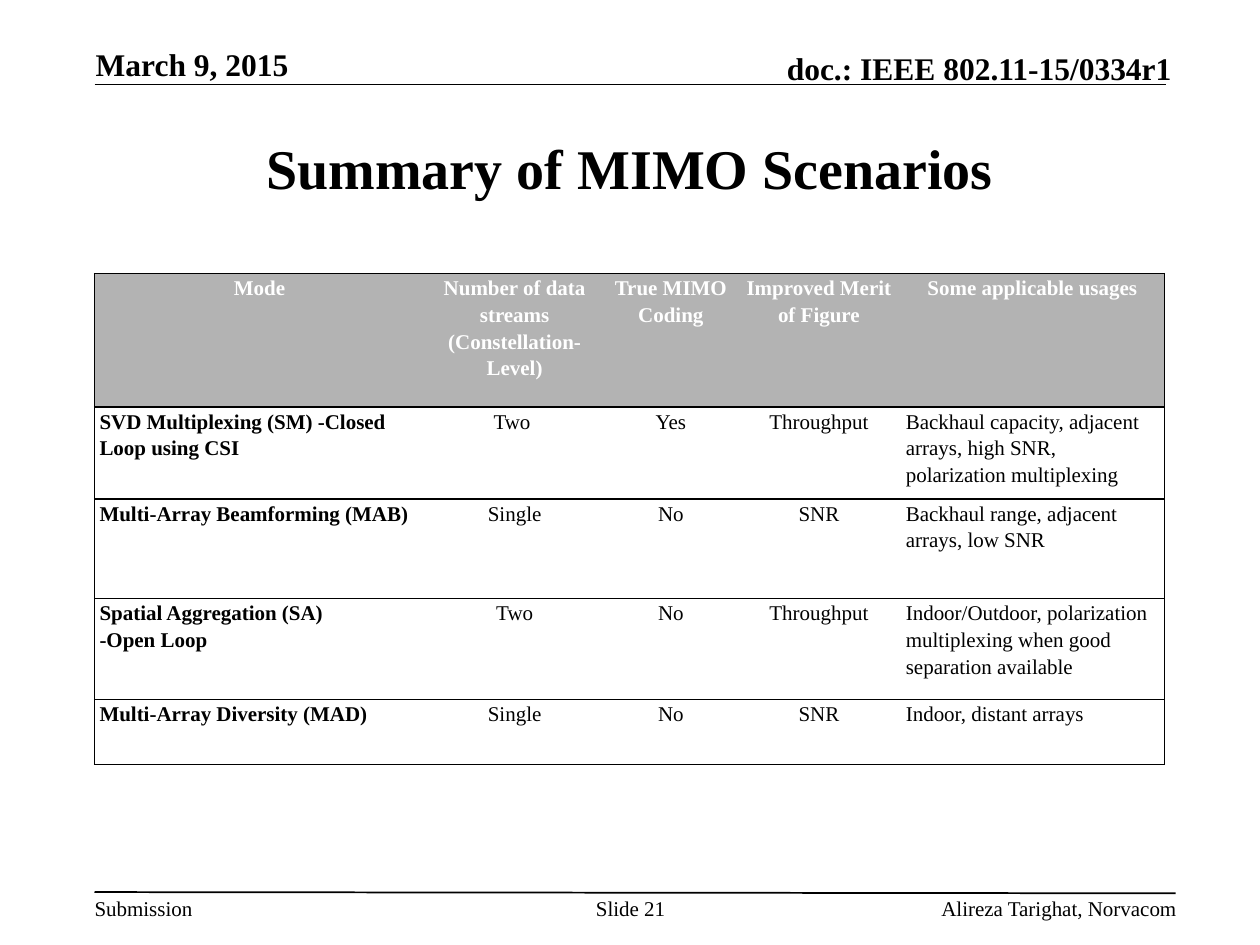
"""Build the summary slide of MIMO scenarios."""
from typing import NamedTuple

from lxml import etree
from pptx import Presentation
from pptx.dml.color import RGBColor
from pptx.enum import shapes, text
from pptx.oxml import ns
from pptx.util import Inches, Pt

COLORS = {"ink": "000000", "header_text": "FFFFFF", "header_fill": "B3B3B3"}
FONT = "Times New Roman"
LEFT, CENTER, RIGHT = text.PP_ALIGN.LEFT, text.PP_ALIGN.CENTER, text.PP_ALIGN.RIGHT
TOP, MIDDLE, BOTTOM = text.MSO_ANCHOR.TOP, text.MSO_ANCHOR.MIDDLE, text.MSO_ANCHOR.BOTTOM
BORDER = Pt(0.75)


class Label(NamedTuple):
    words: str
    box: tuple[float, float, float, float]
    size: float = 12
    bold: bool = False
    align: text.PP_ALIGN = LEFT
    anchor: text.MSO_ANCHOR = TOP
    margins: tuple[float, float, float, float] = (0, 0.03, 0, 0)
    wrap: bool = True


class Rule(NamedTuple):
    start: tuple[float, float]
    end: tuple[float, float]


LABELS = [
    Label("Submission", (0.75, 7.08, 0.79, 0.25), wrap=False),
    Label("doc.: IEEE 802.11-15/0334r1", (5.47, 0.39, 3.83, 0.3), 18, True, RIGHT, BOTTOM,
          (0, 0, 0, 0)),
    Label("Summary of MIMO Scenarios", (0.75, 0.75, 8.5, 1.16), 32, True, CENTER, MIDDLE,
          (0.1, 0.05, 0.1, 0.05)),
    Label("Slide 21", (4.61, 7.08, 0.79, 0.29), align=CENTER),
    Label("Alireza Tarighat, Norvacom", (5.86, 7.08, 3.48, 0.2), align=RIGHT),
    Label("March 9, 2015", (0.76, 0.36, 2.05, 0.3), 18, True, LEFT, BOTTOM, (0, 0, 0, 0)),
]
RULES = [Rule((0.75, 0.67), (9.25, 0.67)), Rule((0.75, 7.08), (9.33, 7.09))]

COLUMN_WIDTHS = [2.62, 1.43, 1.05, 1.3, 2.09]
ROW_HEIGHTS = [1.06, 0.73, 0.79, 0.8, 0.52]
SCENARIOS = [
    ("Mode", "Number of data streams (Constellation-Level)", "True MIMO Coding",
     "Improved Merit of Figure", "Some applicable usages"),
    ("SVD Multiplexing (SM) -Closed Loop using CSI", "Two ", "Yes", "Throughput",
     "Backhaul capacity, adjacent arrays, high SNR, polarization multiplexing"),
    ("Multi-Array Beamforming (MAB)", "Single", "No", "SNR",
     "Backhaul range, adjacent arrays, low SNR"),
    ("Spatial Aggregation (SA)\n-Open Loop", "Two", "No", "Throughput",
     "Indoor/Outdoor, polarization multiplexing when good separation available"),
    ("Multi-Array Diversity (MAD)", "Single", "No", "SNR", "Indoor, distant arrays"),
]


def write_text(frame, words: str, *, size: float = 12, bold: bool = False,
               color: str = "ink", align=LEFT, spacing: float = 1.0) -> None:
    """Fill a text frame, one paragraph per line of words."""
    for index, line in enumerate(words.split("\n")):
        paragraph = frame.add_paragraph() if index else frame.paragraphs[0]
        paragraph.alignment = align
        paragraph.line_spacing = spacing
        run = paragraph.add_run()
        run.text = line
        run.font.name = FONT
        run.font.size = Pt(size)
        run.font.bold = bold
        run.font.color.rgb = RGBColor.from_string(COLORS[color])


def add_label(slide, label: Label) -> None:
    """Place a label in its own text box."""
    frame = slide.shapes.add_textbox(*map(Inches, label.box)).text_frame
    frame.word_wrap = label.wrap
    frame.vertical_anchor = label.anchor
    (frame.margin_left, frame.margin_top,
     frame.margin_right, frame.margin_bottom) = map(Inches, label.margins)
    write_text(frame, label.words, size=label.size, bold=label.bold, align=label.align)


def add_rule(slide, rule: Rule) -> None:
    """Draw a thin line without shadow."""
    line = slide.shapes.add_connector(
        shapes.MSO_CONNECTOR.STRAIGHT, *map(Inches, rule.start + rule.end))
    line.line.color.rgb = RGBColor.from_string(COLORS["ink"])
    line.line.width = Pt(1)
    etree.SubElement(line._element.spPr, ns.qn("a:effectLst"))


def set_borders(cell, visible: str) -> None:
    """Draw the sides named in visible and clear the others."""
    properties = cell._tc.get_or_add_tcPr()
    for side in "LRTB":
        border = etree.SubElement(properties, ns.qn(f"a:ln{side}"), w=str(int(BORDER)))
        if side in visible:
            fill = etree.SubElement(border, ns.qn("a:solidFill"))
            etree.SubElement(fill, ns.qn("a:srgbClr"), val=COLORS["ink"])
        else:
            etree.SubElement(border, ns.qn("a:noFill"))


def add_scenarios(slide) -> None:
    """Build the table of scenarios."""
    last = len(COLUMN_WIDTHS) - 1
    table = slide.shapes.add_table(
        len(ROW_HEIGHTS), len(COLUMN_WIDTHS), Inches(0.75), Inches(2.17),
        Inches(sum(COLUMN_WIDTHS)), Inches(sum(ROW_HEIGHTS))).table
    table.horz_banding = False
    for column, width in zip(table.columns, COLUMN_WIDTHS):
        column.width = Inches(width)
    for row, height in zip(table.rows, ROW_HEIGHTS):
        row.height = Inches(height)
    for r, entries in enumerate(SCENARIOS):
        header = r == 0
        for c, words in enumerate(entries):
            cell = table.cell(r, c)
            cell.margin_left = cell.margin_right = Inches(0.04)
            cell.margin_top = cell.margin_bottom = 0
            set_borders(cell, "TB" + "L" * (c == 0) + "R" * (c == last))
            if header:
                cell.fill.solid()
                cell.fill.fore_color.rgb = RGBColor.from_string(COLORS["header_fill"])
            else:
                cell.fill.background()
            write_text(cell.text_frame, words, bold=header or c == 0,
                       color="header_text" if header else "ink",
                       align=CENTER if header or 0 < c < last else LEFT, spacing=1.15)


def main() -> None:
    """Assemble and save the slide."""
    deck = Presentation()
    deck.slide_width, deck.slide_height = Inches(10), Inches(7.5)
    slide = deck.slides.add_slide(deck.slide_layouts[6])
    for rule in RULES:
        add_rule(slide, rule)
    add_scenarios(slide)
    for label in LABELS:
        add_label(slide, label)
    deck.save("out.pptx")


if __name__ == "__main__":
    main()
